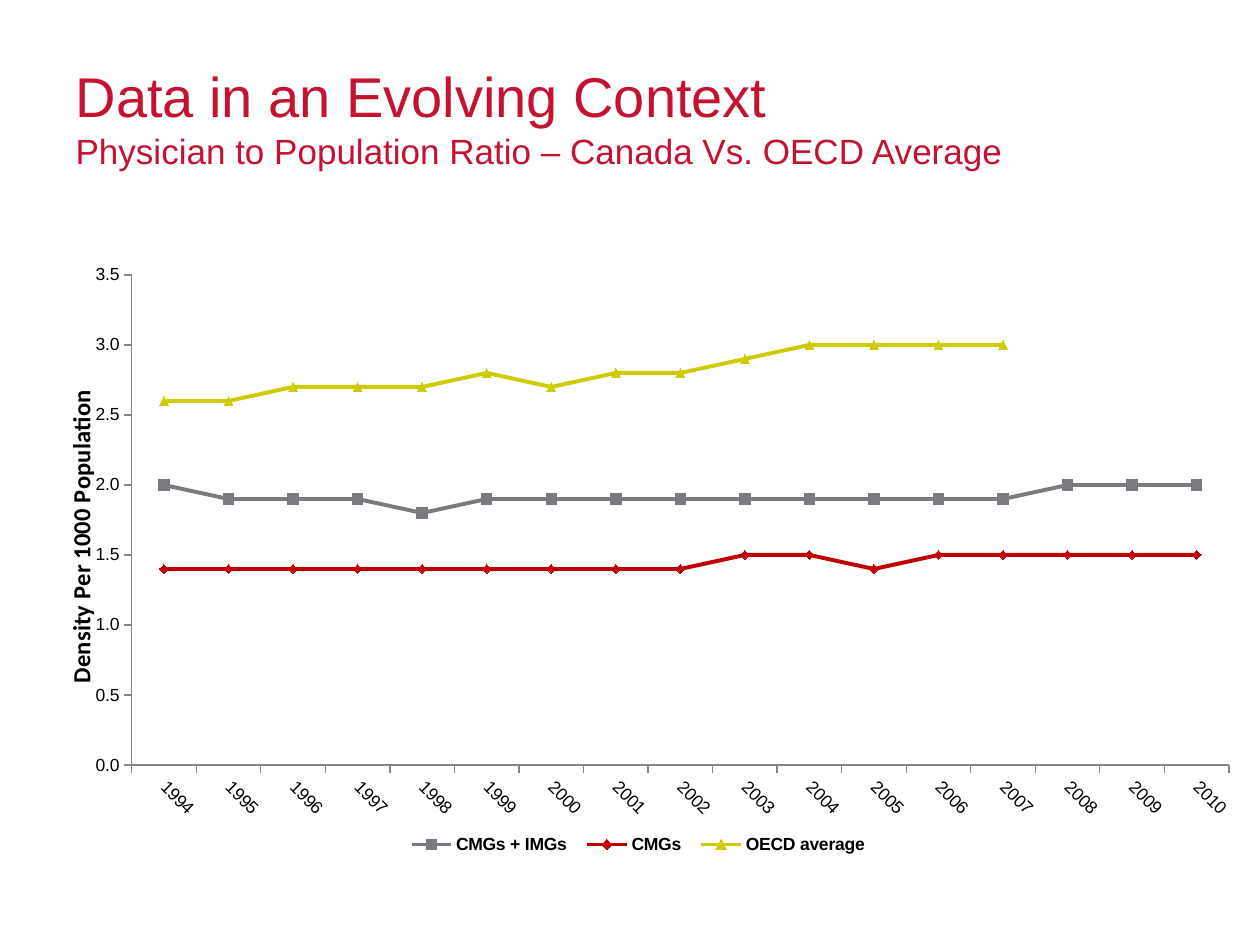
from lxml import etree
from pptx import Presentation
from pptx.chart import data as chart_data
from pptx.dml.color import RGBColor
from pptx.enum import chart as ch, text
from pptx.oxml import parse_xml
from pptx.oxml.ns import nsdecls, qn
from pptx.util import Inches, Pt

# Content
COLORS = {"title": "C41230", "text": "000000", "axis": "868686",
          "gray": "797B7E", "red": "C00000", "yellow": "CCCC00"}
HEADING = [("Data in an Evolving Context", 32),
           ("Physician to Population Ratio – Canada Vs. OECD Average", 20)]
AXIS_TITLE = "Density Per 1000 Population"
YEARS = [str(year) for year in range(1994, 2011)]
MARKER = ch.XL_MARKER_STYLE
SERIES = [
    ("CMGs + IMGs", "gray", MARKER.SQUARE,
     [2, 1.9, 1.9, 1.9, 1.8, 1.9, 1.9, 1.9, 1.9, 1.9, 1.9, 1.9, 1.9, 1.9, 2, 2, 2]),
    ("CMGs", "red", MARKER.DIAMOND,
     [1.4, 1.4, 1.4, 1.4, 1.4, 1.4, 1.4, 1.4, 1.4, 1.5, 1.5, 1.4, 1.5, 1.5, 1.5, 1.5, 1.5]),
    ("OECD average", "yellow", MARKER.TRIANGLE,
     [2.6, 2.6, 2.7, 2.7, 2.7, 2.8, 2.7, 2.8, 2.8, 2.9, 3, 3, 3, 3, None, None, None]),
]
# Fractions of the chart frame: x, y, width, height
PLOT_AREA = {"x": 0.08, "y": 0.13, "w": 0.91, "h": 0.71}
LEGEND_AREA = {"x": 0.3, "y": 0.93, "w": 0.4, "h": 0.05}
AXIS_TITLE_SPOT = {"x": 0.02, "y": 0.29}


def rgb(name):
    return RGBColor.from_string(COLORS[name])


def style(target, **values):
    for key, value in values.items():
        setattr(target, key, value)


def set_font(font, color, **values):
    style(font, **values)
    font.color.rgb = rgb(color)


def place(parent, area, before, inner=False):
    """Give a chart part a fixed position, ahead of the named child elements."""
    for old in parent.findall(qn("c:layout")):
        parent.remove(old)
    layout = parse_xml(f"<c:layout {nsdecls('c')}><c:manualLayout/></c:layout>")
    entries = [("layoutTarget", "inner")] if inner else []
    entries += [("xMode", "edge"), ("yMode", "edge"), *area.items()]
    for tag, value in entries:
        etree.SubElement(layout[0], qn(f"c:{tag}")).set("val", str(value))
    following = next(child for child in parent if child.tag in map(qn, before))
    following.addprevious(layout)


prs = Presentation()
style(prs, slide_width=Inches(10), slide_height=Inches(7.5))
slide = prs.slides.add_slide(prs.slide_layouts[5])

# Title and subtitle in one placeholder
title = slide.shapes.title
style(title, left=Inches(0.5), top=Inches(0.3), width=Inches(9), height=Inches(1.25))
style(title.text_frame, vertical_anchor=text.MSO_ANCHOR.MIDDLE, word_wrap=True,
      auto_size=text.MSO_AUTO_SIZE.NONE)
heading = title.text_frame.paragraphs[0]
heading.alignment = text.PP_ALIGN.LEFT
for index, (line, size) in enumerate(HEADING):
    if index:
        heading.add_line_break()
    run = heading.add_run()
    run.text = line
    set_font(run.font, "title", name="Arial", size=Pt(size))

# Line chart
ratios = chart_data.CategoryChartData(number_format="0.0")
ratios.categories = YEARS
for name, _, _, values in SERIES:
    ratios.add_series(name, values)
chart = slide.shapes.add_chart(
    ch.XL_CHART_TYPE.LINE_MARKERS, Inches(0.28), Inches(1.47),
    Inches(9.57), Inches(5.48), ratios).chart
style(chart, has_title=False, has_legend=True)
set_font(chart.font, "text", name="Arial", size=Pt(10))
plot = chart.plots[0]
plot.vary_by_categories = False
for series, (_, color, marker, _) in zip(plot.series, SERIES):
    series.smooth = False
    series.format.line.width = Pt(2.25)
    series.format.line.color.rgb = rgb(color)
    style(series.marker, style=marker, size=6 if color == "gray" else 5)
    series.marker.format.fill.solid()
    series.marker.format.fill.fore_color.rgb = rgb(color)
    series.marker.format.line.color.rgb = rgb(color)

# Axes
years, density = chart.category_axis, chart.value_axis
for axis in (years, density):
    style(axis, has_major_gridlines=False, major_tick_mark=ch.XL_TICK_MARK.OUTSIDE,
          minor_tick_mark=ch.XL_TICK_MARK.NONE)
    axis.format.line.color.rgb = rgb("axis")
    axis.format.line.width = Pt(0.75)
    set_font(axis.tick_labels.font, "text", name="Arial", size=Pt(10))
years._element.find(qn("c:txPr")).find(qn("a:bodyPr")).set("rot", "2700000")
style(density, minimum_scale=0, maximum_scale=3.5, major_unit=0.5)
style(density.tick_labels, number_format="0.0", number_format_is_linked=False)
density_title = density.axis_title
density_title.text_frame.text = AXIS_TITLE
set_font(density_title.text_frame.paragraphs[0].runs[0].font, "text",
         name="Calibri", size=Pt(14), bold=True)
density_title.text_frame._txBody.find(qn("a:bodyPr")).set("rot", "-5400000")

# Legend and fixed positions
legend = chart.legend
style(legend, position=ch.XL_LEGEND_POSITION.BOTTOM, include_in_layout=False)
set_font(legend.font, "text", name="Arial", size=Pt(10), bold=True)
place(plot._element.getparent(), PLOT_AREA, ["c:lineChart"], inner=True)
place(legend._element, LEGEND_AREA, ["c:overlay"])
place(density_title._element, AXIS_TITLE_SPOT, ["c:overlay", "c:spPr"])

prs.save("out.pptx")
